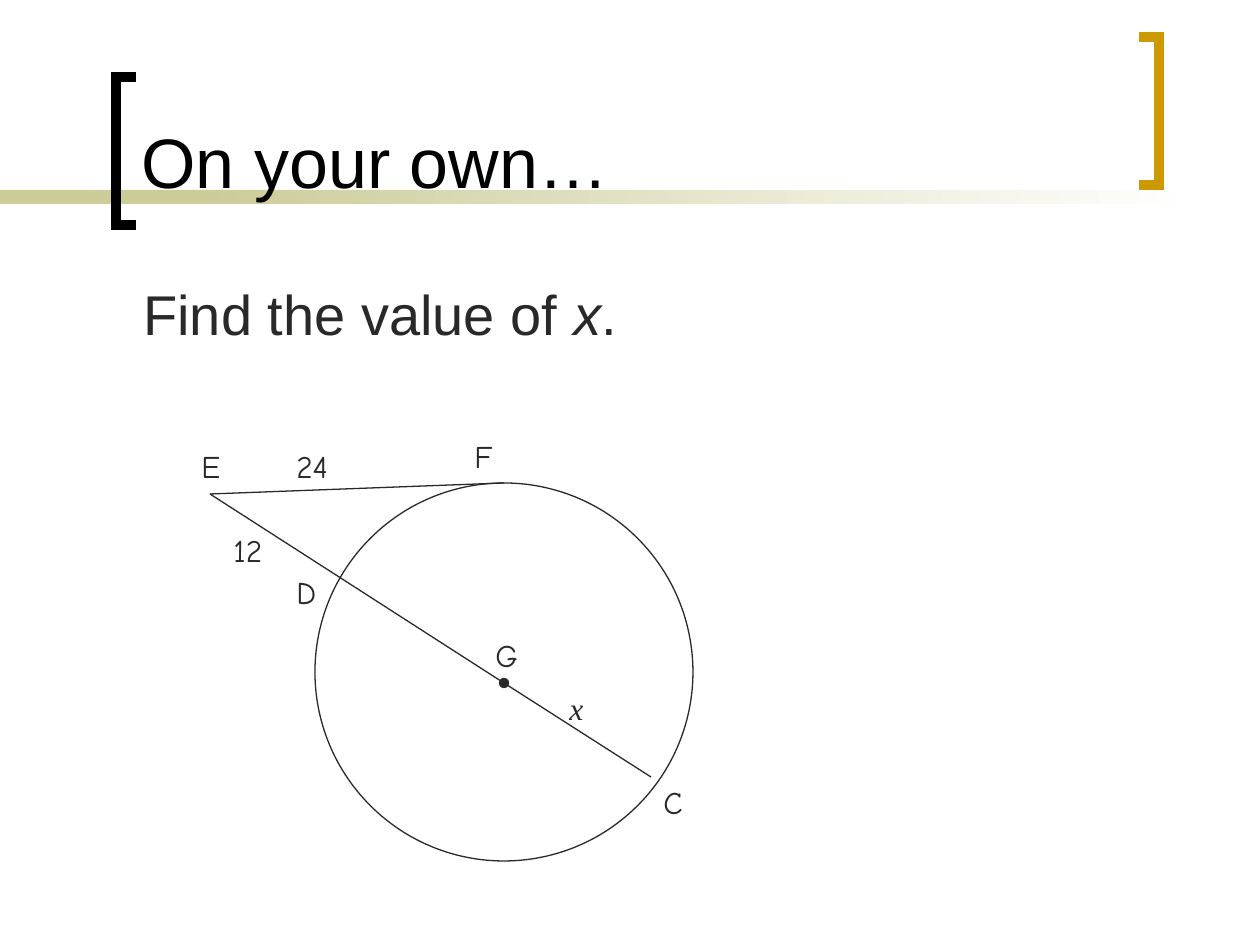
import pptx
import pptx.util
import pptx.dml.color
import pptx.enum.shapes
import pptx.enum.text
import pptx.oxml.ns
import lxml.etree

RGB = pptx.dml.color.RGBColor
BLACK = RGB(0x00, 0x00, 0x00)
INK = RGB(0x29, 0x29, 0x29)
GOLD = RGB(0xCC, 0x99, 0x00)
SAGE = RGB(0xCC, 0xCC, 0x99)
WHITE = RGB(0xFF, 0xFF, 0xFF)

PX = 914400 / 126
Pt = pptx.util.Pt
SHAPES = pptx.enum.shapes.MSO_SHAPE
qn = pptx.oxml.ns.qn


def px(*lengths):
    """Turn px lengths into EMU."""
    return [round(n * PX) for n in lengths]


def format_run(r, size, color, font="Arial", italic=False):
    r.font.size = Pt(size)
    r.font.name = font
    r.font.italic = italic
    r.font.color.rgb = color


prs = pptx.Presentation()
prs.slide_width, prs.slide_height = px(1260, 945)
s = prs.slides.add_slide(prs.slide_layouts[5])

# Band that fades out to the right
band = s.shapes.add_shape(SHAPES.RECTANGLE, *px(0, 190, 294, 14))
band.fill.solid()
band.fill.fore_color.rgb = SAGE
fade = s.shapes.add_shape(SHAPES.RECTANGLE, *px(199, 190, 998, 14))
fade.fill.gradient()
fade.fill.gradient_angle = 0
for stop, position, color in zip(fade.fill.gradient_stops, (0, 1), (SAGE, WHITE)):
    stop.position = position
    stop.color.rgb = color
for sp in (band, fade):
    sp.line.fill.background()
    sp.shadow.inherit = False

# Brackets: open end x, spine x, top, colour
for end, spine, top, color in ((136, 116, 77, BLACK), (1139, 1159, 37, GOLD)):
    bottom = top + 148
    outline = s.shapes.build_freeform(end, top, scale=PX)
    outline.add_line_segments([(spine, top), (spine, bottom), (end, bottom)], close=False)
    sp = outline.convert_to_shape()
    sp.fill.background()
    sp.line.color.rgb = color
    sp.line.width = Pt(6)
    sp.shadow.inherit = False
    lxml.etree.SubElement(sp.line._get_or_add_ln(), qn("a:miter"), lim="800000")

# Title, in front of the band
title = s.shapes.title
title.left, title.top, title.width, title.height = px(129, 14, 987, 195)
tf = title.text_frame
tf.text = "On your own…"
tf.vertical_anchor = pptx.enum.text.MSO_ANCHOR.BOTTOM
p = tf.paragraphs[0]
p.alignment = pptx.enum.text.PP_ALIGN.LEFT
format_run(p.runs[0], 40, BLACK)
s.shapes.element.append(title.element)

# Task
tf = s.shapes.add_textbox(*px(131, 273, 1056, 567)).text_frame
tf.word_wrap = True
p = tf.paragraphs[0]
p.space_before = Pt(3)
for text, italic in (("Find the value of ", False), ("x", True), (".", False)):
    r = p.add_run()
    r.text = text
    format_run(r, 32, INK, italic=italic)

# Circle with tangent EF and secant EC through the centre G
circle = s.shapes.add_shape(SHAPES.OVAL, *px(315, 483, 378, 378))
circle.fill.background()
circle.line.color.rgb = INK
circle.line.width = Pt(0.75)
circle.shadow.inherit = False

E, F, G, C = (210, 494), (504, 483), (504, 683), (651, 777)
for start, end in ((F, E), (E, G), (G, C)):
    line = s.shapes.add_connector(pptx.enum.shapes.MSO_CONNECTOR.STRAIGHT, *px(*start, *end))
    line.line.color.rgb = INK
    line.line.width = Pt(0.75)
    lxml.etree.SubElement(line.element.spPr, qn("a:effectLst"))
    if end == G:
        lxml.etree.SubElement(line.line._get_or_add_ln(), qn("a:tailEnd"), type="oval")

# Labels
for text, left, top in (
    ("E", 189, 441),
    ("F", 462, 431),
    ("C", 651, 777),
    ("D", 284, 567),
    ("12", 221, 525),
    ("24", 284, 441),
    ("x", 557, 683),
    ("G", 483, 630),
):
    tf = s.shapes.add_textbox(*px(left, top, 84, 50)).text_frame
    tf.word_wrap = True
    tf.text = text
    unknown = text == "x"
    font = "Times New Roman" if unknown else "Comic Neue"
    format_run(tf.paragraphs[0].runs[0], 18, INK, font, unknown)

prs.save("out.pptx")
